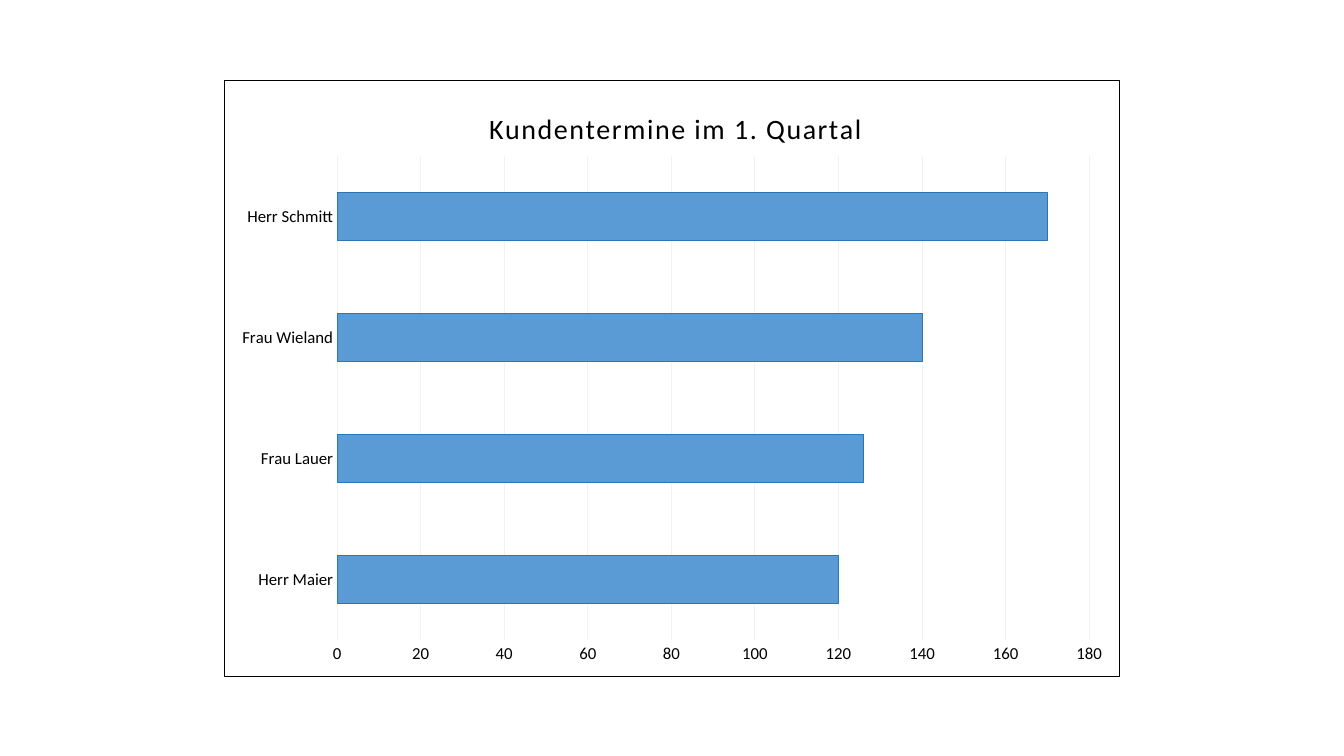
from lxml.etree import SubElement
from pptx import Presentation
from pptx.chart.data import CategoryChartData
from pptx.dml.color import RGBColor
from pptx.enum.chart import XL_CHART_TYPE, XL_TICK_MARK
from pptx.oxml import parse_xml
from pptx.oxml.ns import nsdecls, qn
from pptx.util import Inches, Pt

COLORS = {"text": "000000", "border": "000000", "grid": "F2F2F2",
          "bar": "5B9BD5", "bar_line": "2E75B6"}
APPOINTMENTS = {"Herr Maier": 120, "Frau Lauer": 126,
                "Frau Wieland": 140, "Herr Schmitt": 170}


def rgb(name):
    return RGBColor.from_string(COLORS[name])


def style_font(font, size):
    formats = {"name": "Calibri", "size": Pt(size), "bold": False}
    for key, value in formats.items():
        setattr(font, key, value)
    font.color.rgb = rgb("text")


def style_line(line, color):
    line.color.rgb = rgb(color)
    line.width = Pt(0.75)


def set_layout(parent, **fractions):
    """Place a chart part by fractions of the chart's size."""
    layout = parent.find(qn("c:layout"))
    if layout is None:
        layout = parse_xml(f"<c:layout {nsdecls('c')}/>")
        before = parent.find(qn("c:tx"))
        parent.insert(0 if before is None else parent.index(before) + 1, layout)
    for child in list(layout):
        layout.remove(child)
    manual = SubElement(layout, qn("c:manualLayout"))
    if "w" in fractions:
        SubElement(manual, qn("c:layoutTarget")).set("val", "inner")
    for mode in ("xMode", "yMode"):
        SubElement(manual, qn(f"c:{mode}")).set("val", "edge")
    for key, value in fractions.items():
        SubElement(manual, qn(f"c:{key}")).set("val", str(value))


def add_title(chart, text):
    chart.has_title = True
    title = chart.chart_title
    r = title.text_frame.paragraphs[0].add_run()
    r.text = text
    style_font(r.font, 20)
    r.font._element.set("spc", "100")
    title.include_in_layout = False
    set_layout(title._element, x=0.29, y=0.04)


def style_axes(chart):
    for axis in (chart.category_axis, chart.value_axis):
        formats = {"major_tick_mark": XL_TICK_MARK.NONE,
                   "minor_tick_mark": XL_TICK_MARK.NONE,
                   "has_major_gridlines": axis is chart.value_axis}
        for key, value in formats.items():
            setattr(axis, key, value)
        axis.format.line.fill.background()
        style_font(axis.tick_labels.font, 12)
    value_axis = chart.value_axis
    scale = {"minimum_scale": 0, "maximum_scale": 180, "major_unit": 20}
    for key, value in scale.items():
        setattr(value_axis, key, value)
    style_line(value_axis.major_gridlines.format.line, "grid")


def add_border(chart):
    props = parse_xml(
        f'<c:spPr {nsdecls("c", "a")}><a:noFill/><a:ln w="{Pt(0.75)}"><a:solidFill>'
        f'<a:srgbClr val="{COLORS["border"]}"/></a:solidFill></a:ln></c:spPr>')
    chart._chartSpace.find(qn("c:chart")).addnext(props)


def add_appointments_chart(slide, left, top, width, height):
    data = CategoryChartData()
    data.categories = list(APPOINTMENTS)
    data.add_series("Series 1", list(APPOINTMENTS.values()))
    box = [Inches(n) for n in (left, top, width, height)]
    chart = slide.shapes.add_chart(XL_CHART_TYPE.BAR_CLUSTERED, *box, data).chart
    style_font(chart.font, 10)
    chart.has_legend = False

    # Title, axes and frame
    add_title(chart, "Kundentermine im 1. Quartal")
    style_axes(chart)
    add_border(chart)

    # Bars
    plot = chart.plots[0]
    plot.gap_width = 150
    plot.vary_by_categories = False
    bars = plot.series[0].format
    bars.fill.solid()
    bars.fill.fore_color.rgb = rgb("bar")
    style_line(bars.line, "bar_line")
    set_layout(chart._chartSpace.find(qn("c:chart")).find(qn("c:plotArea")),
               x=0.126, y=0.127, w=0.84, h=0.811)


def main():
    prs = Presentation()
    prs.slide_width, prs.slide_height = Inches(13.33), Inches(7.5)
    slide = prs.slides.add_slide(prs.slide_layouts[6])
    add_appointments_chart(slide, 2.22, 0.79, 8.89, 5.93)
    prs.save("out.pptx")


if __name__ == "__main__":
    main()
